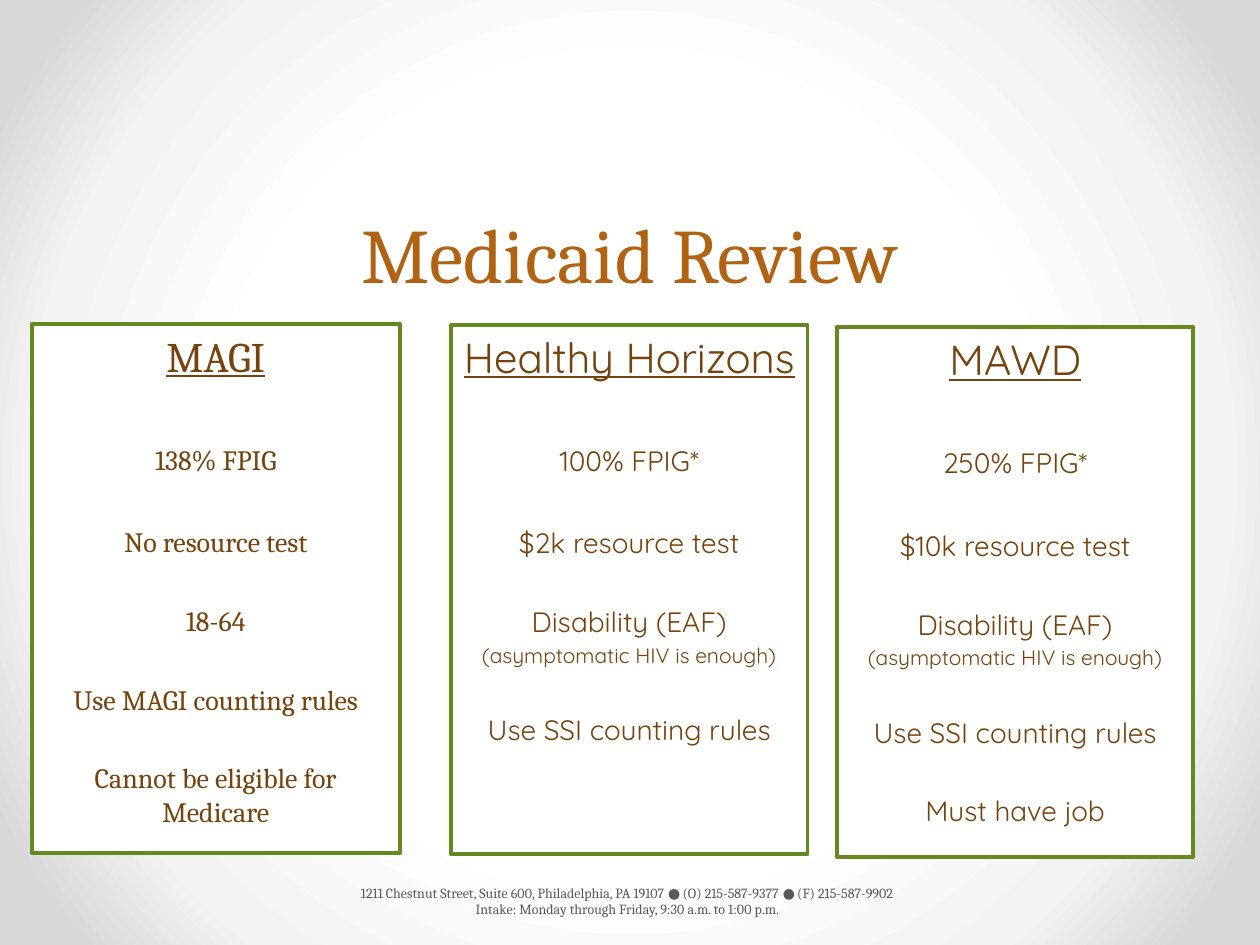
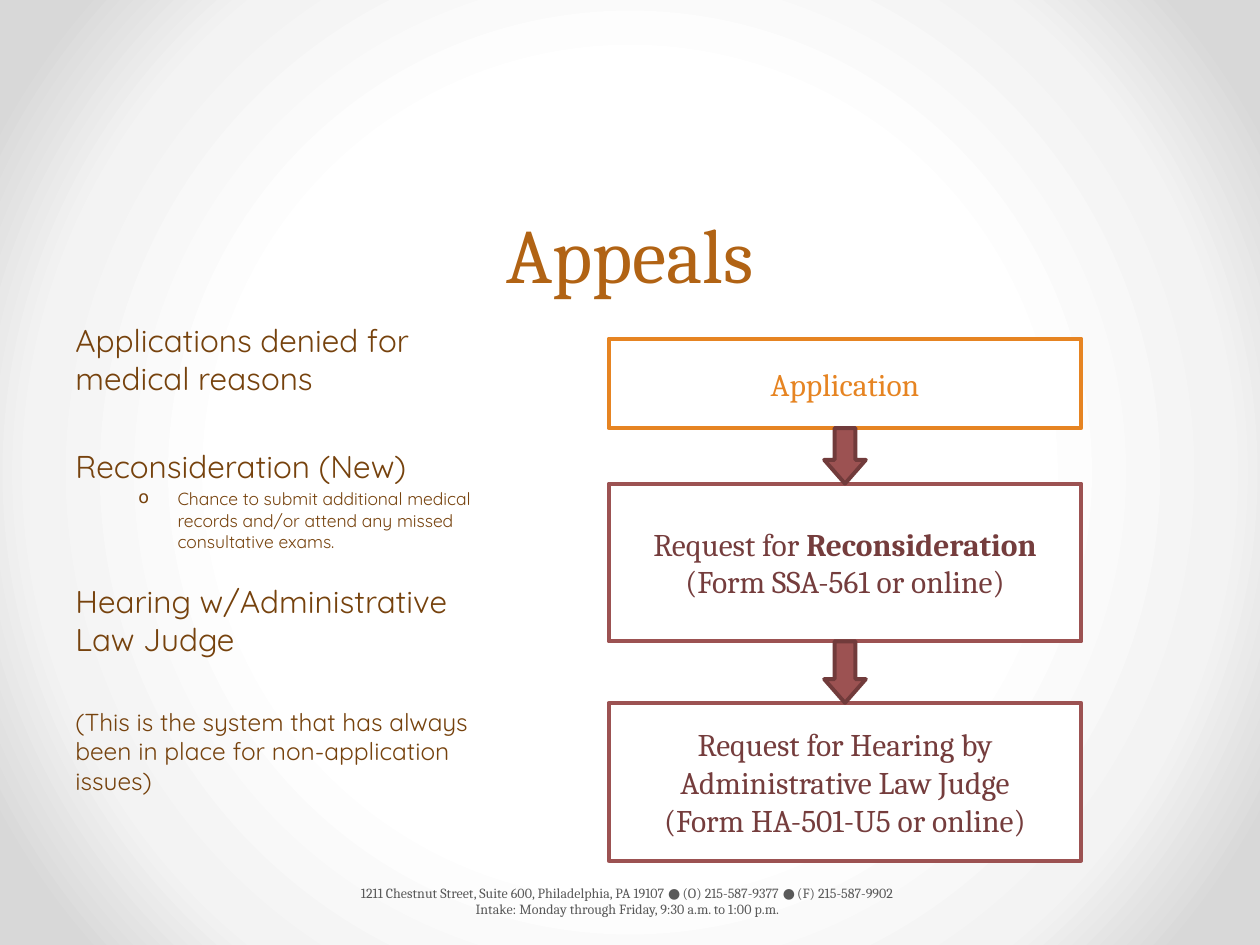
from dataclasses import dataclass

from lxml.etree import SubElement
from pptx import Presentation
from pptx.dml.color import RGBColor
from pptx.enum.shapes import MSO_SHAPE
from pptx.enum.text import MSO_ANCHOR, MSO_AUTO_SIZE, PP_ALIGN
from pptx.oxml import parse_xml
from pptx.oxml.ns import nsdecls, qn
from pptx.util import Cm, Pt


@dataclass(frozen=True)
class Theme:
    serif: str = "Cambria"
    sans: str = "Quicksand"
    title: str = "B16314"
    body: str = "76420D"
    foot: str = "595959"
    paper: str = "FFFFFF"
    green: str = "63891F"
    orange: str = "E68422"
    red: str = "9C5252"
    wine: str = "753D3D"
    edge: str = "713B3B"
    glow: tuple = ((0, "FFFFFF"), (50, "FFFFFF"), (76, "F3F3F3"),
                   (92, "D8D8D8"), (100, "D8D8D8"))
    title_size: int = 44
    head_size: int = 24
    lead_size: int = 18
    item_size: int = 16
    aside_size: int = 14
    note_size: int = 12
    sub_size: int = 10
    foot_size: int = 8
    stroke: float = 2.25


@dataclass
class Line:
    """One paragraph; text between ** marks is bold."""
    text: str
    size: float
    gap: float = 0
    under: bool = False
    bullet: bool = False


T = Theme()
FOOTER = ("1211 Chestnut Street, Suite 600, Philadelphia, PA 19107 ● (O) 215-587-9377 ● (F) 215-587-9902",
          "Intake: Monday through Friday, 9:30 a.m. to 1:00 p.m.")
HIV = "(asymptomatic HIV is enough)"
CARDS = (
    (0.64, 6.53, 7.42, T.serif, "MAGI",
     ("138% FPIG", "No resource test", "18-64", "Use MAGI counting rules",
      "Cannot be eligible for Medicare")),
    (9.09, 6.55, 7.19, T.sans, "Healthy Horizons",
     ("100% FPIG*", "$2k resource test", "Disability (EAF)", HIV,
      "Use SSI counting rules")),
    (16.87, 6.6, 7.19, T.sans, "MAWD",
     ("250% FPIG*", "$10k resource test", "Disability (EAF)", HIV,
      "Use SSI counting rules", "Must have job")),
)
STEPS = (
    (6.83, 1.8, T.orange, T.orange, ("Application",)),
    (9.75, 3.18, T.red, T.wine,
     ("Request for **Reconsideration**", "(Form SSA-561 or online)")),
    (14.17, 3.18, T.red, T.wine,
     ("Request for Hearing by Administrative Law Judge",
      "(Form HA-501-U5 or online)")),
)
REASONS = (
    Line("Applications denied for medical reasons", T.lead_size),
    Line("Reconsideration (New)", T.lead_size, 28.8),
    Line("Chance to submit additional medical records and/or attend any "
         "missed consultative exams.", T.sub_size, 2, bullet=True),
    Line("Hearing w/Administrative Law Judge", T.lead_size, 17.6),
    Line("(This is the system that has always been in place for "
         "non-application issues)", T.aside_size, 28),
)


def rgb(code):
    return RGBColor.from_string(code)


def glow(master):
    """Give every slide the round white-to-grey background."""
    fill = master.background.fill
    fill.solid()
    stops = "".join(f'<a:gs pos="{pos * 1000}"><a:srgbClr val="{code}"/></a:gs>'
                    for pos, code in T.glow)
    grad = parse_xml(
        f'<a:gradFill {nsdecls("a")} rotWithShape="1"><a:gsLst>{stops}</a:gsLst>'
        '<a:path path="circle"><a:fillToRect l="50000" t="50000" r="50000" '
        'b="50000"/></a:path></a:gradFill>')
    solid = master.element.find(".//" + qn("a:solidFill"))
    solid.getparent().replace(solid, grad)


def mark(para):
    props = para._p.get_or_add_pPr()
    props.set("marL", str(Cm(2.06)))
    props.set("indent", str(-Cm(0.79)))
    color = SubElement(props, qn("a:buClr"))
    SubElement(color, qn("a:srgbClr"), val=T.body)
    SubElement(props, qn("a:buChar"), char="o")


def write(frame, lines, font, color, align=PP_ALIGN.CENTER,
          anchor=MSO_ANCHOR.TOP):
    frame.word_wrap = True
    frame.vertical_anchor = anchor
    for i, line in enumerate(lines):
        para = frame.paragraphs[0] if i == 0 else frame.add_paragraph()
        para.alignment = align
        if line.gap:
            para.space_before = Pt(line.gap)
        if line.bullet:
            mark(para)
        for j, part in enumerate(line.text.split("**")):
            if not part:
                continue
            run = para.add_run()
            run.text = part
            run.font.name = font
            run.font.size = Pt(line.size)
            run.font.color.rgb = rgb(color)
            if line.under:
                run.font.underline = True
            if j % 2:
                run.font.bold = True


def block(slide, kind, area, fill, edge):
    shape = slide.shapes.add_shape(kind, *map(Cm, area))
    shape.shadow.inherit = False
    shape.fill.solid()
    shape.fill.fore_color.rgb = rgb(fill)
    shape.line.color.rgb = rgb(edge)
    shape.line.width = Pt(T.stroke)
    return shape


def label(slide, area, lines, font, color, **style):
    box = slide.shapes.add_textbox(*map(Cm, area))
    write(box.text_frame, lines, font, color, **style)
    return box


def start(deck, text):
    """Add a slide with its title and the office footer."""
    slide = deck.slides.add_slide(deck.slide_layouts[5])
    title = slide.shapes.title
    title.left, title.top, title.width, title.height = map(
        Cm, (1.27, 2.49, 22.86, 3.66))
    frame = title.text_frame
    frame.auto_size = MSO_AUTO_SIZE.NONE
    write(frame, [Line(text, T.title_size)], T.serif, T.title,
          anchor=MSO_ANCHOR.BOTTOM)
    frame.paragraphs[0].line_spacing = 1.32
    foot = label(slide, (1.3, 17.65, 22.83, 1.02),
                 [Line(row, T.foot_size) for row in FOOTER],
                 T.serif, T.foot, anchor=MSO_ANCHOR.MIDDLE)
    foot.text_frame.margin_left = Cm(0.13)
    return slide


def card(slide, left, top, width, font, head, items):
    gaps = (35.4, 27.9)
    lines = [Line(head, T.head_size, under=True)]
    for i, item in enumerate(items):
        if item == HIV:
            lines.append(Line(item, T.note_size, 2.4))
        else:
            gap = gaps[i] if i < len(gaps) else 25.8
            lines.append(Line(item, T.item_size, gap))
    shape = block(slide, MSO_SHAPE.RECTANGLE, (left, top, width, 10.67),
                  T.paper, T.green)
    write(shape.text_frame, lines, font, T.body)


def flow(slide, left, width):
    """Stack the steps, with an arrow filling each gap."""
    thick = 0.84
    end = None
    for top, height, edge, ink, rows in STEPS:
        step = block(slide, MSO_SHAPE.RECTANGLE, (left, top, width, height),
                     T.paper, edge)
        write(step.text_frame, [Line(row, T.lead_size) for row in rows],
              T.serif, ink, anchor=MSO_ANCHOR.MIDDLE)
        if end is not None:
            area = (left + (width - thick) / 2, end, thick, top - end)
            arrow = block(slide, MSO_SHAPE.DOWN_ARROW, area, T.red, T.edge)
            arrow.adjustments[1] = 0.57
        end = top + height


def main():
    deck = Presentation()
    deck.slide_width, deck.slide_height = Cm(25.4), Cm(19.05)
    glow(deck.slide_master)

    review = start(deck, "Medicaid Review")
    for spec_row in CARDS:
        card(review, *spec_row)

    appeals = start(deck, "Appeals")
    label(appeals, (1.27, 6.35, 9.32, 10.67), REASONS, T.sans, T.body,
          align=PP_ALIGN.LEFT)
    flow(appeals, 12.27, 9.53)

    deck.save("out.pptx")


if __name__ == "__main__":
    main()
